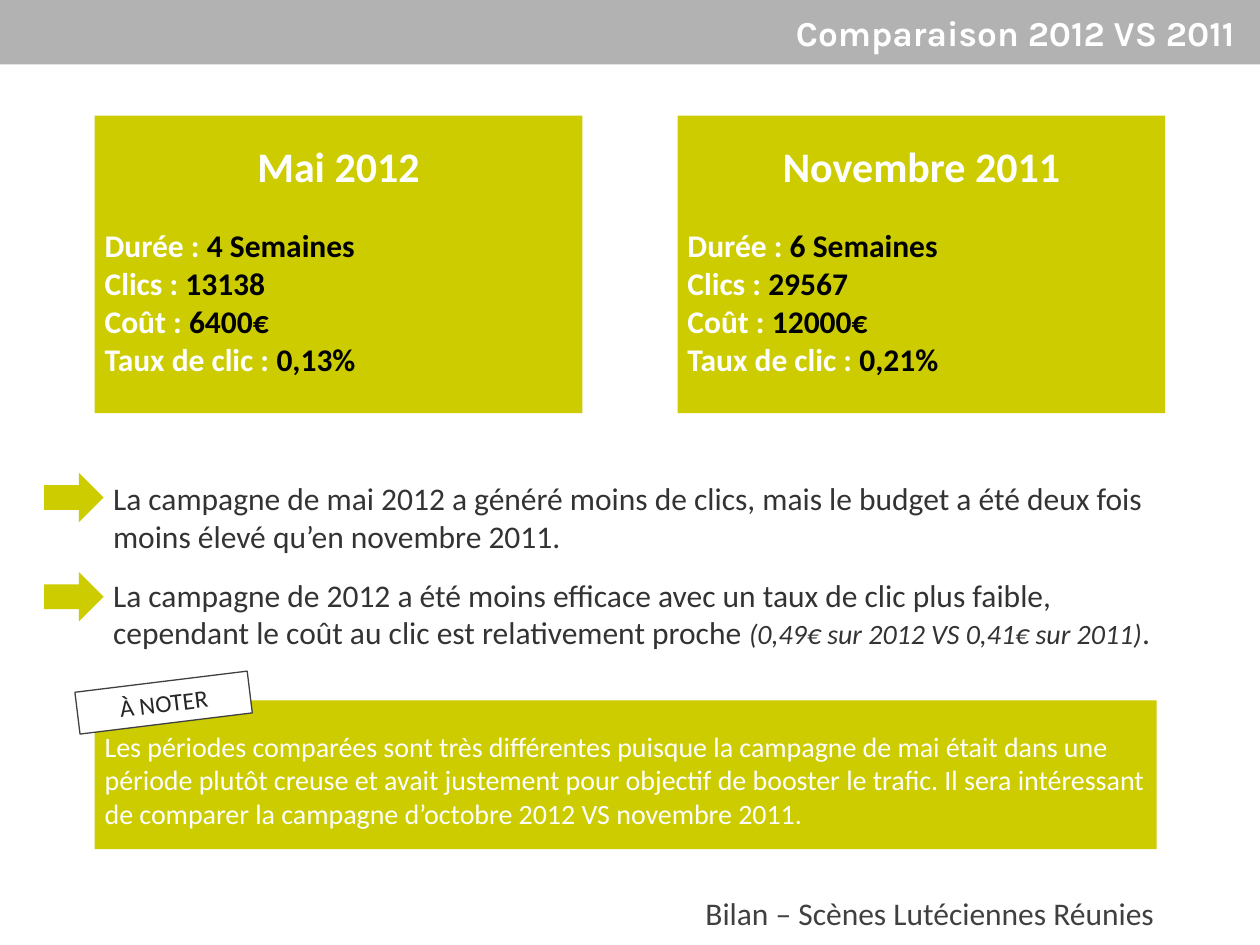
from pptx import Presentation
from pptx.dml.color import RGBColor
from pptx.enum import shapes as sh, text as tx
from pptx.util import Cm, Pt


def paint(item, tone):
    item.fill.solid()
    item.fill.fore_color.rgb = RGBColor.from_string(tone)
    item.line.fill.background()
    item.shadow.inherit = False


def style(run, size, tone, bold=False, italic=False, face="Calibri"):
    font = run.font
    font.name, font.size = face, Pt(size)
    font.bold, font.italic = bold, italic
    font.color.rgb = RGBColor.from_string(tone)


LIME, WHITE, BLACK, DARK = "CCCC00", "FFFFFF", "000000", "333333"
mid = tx.MSO_ANCHOR.MIDDLE
left, center, right = tx.PP_ALIGN.LEFT, tx.PP_ALIGN.CENTER, tx.PP_ALIGN.RIGHT
rect = sh.MSO_SHAPE.RECTANGLE

deck = Presentation()
deck.slide_width, deck.slide_height = Cm(25.4), Cm(19.05)
slide = deck.slides.add_slide(deck.slide_layouts[5])
draw = slide.shapes

title = draw.title
title.left, title.top, title.width, title.height = Cm(0), Cm(0), Cm(25.4), Cm(1.3)
title.fill.solid()
title.fill.fore_color.rgb = RGBColor.from_string("B2B2B2")
frame = title.text_frame
frame.text = "Comparaison 2012 VS 2011"
frame.margin_right = Cm(0.51)
frame.vertical_anchor = mid
frame.paragraphs[0].alignment = right
style(frame.paragraphs[0].runs[0], 20, WHITE, bold=True, face="Karla")

points = [
    [("La campagne de mai 2012 a généré moins de clics, mais le budget a été "
      "deux fois moins élevé qu’en novembre 2011.", 18)],
    [("La campagne de 2012 a été moins efficace avec un taux de clic plus "
      "faible, cependant le coût au clic est relativement proche ", 18),
     ("(0,49€ sur 2012 VS 0,41€ sur 2011)", 16), (".", 18)],
]
body = draw.add_textbox(Cm(2.03), Cm(9.53), Cm(22.1), Cm(3.99))
frame = body.text_frame
frame.word_wrap = True
for i, parts in enumerate(points):
    para = frame.paragraphs[0] if i == 0 else frame.add_paragraph()
    para.space_before, para.space_after = Pt(6 * i), Pt(6)
    for words, size in parts:
        run = para.add_run()
        run.text = words
        style(run, size, DARK, italic=size == 16)
    arrow = draw.add_shape(sh.MSO_SHAPE.RIGHT_ARROW, Cm(0.89), Cm(9.53 + 2 * i),
                           Cm(1.2), Cm(1))
    paint(arrow, LIME)

foot = draw.add_textbox(Cm(8.69), Cm(17.75), Cm(14.83), Cm(1.3))
frame = foot.text_frame
frame.word_wrap = True
frame.vertical_anchor = mid
frame.text = "Bilan – Scènes Lutéciennes Réunies"
frame.paragraphs[0].alignment = right
style(frame.paragraphs[0].runs[0], 18, "404040")

labels = ["Durée : ", "Clics : ", "Coût : ", "Taux de clic : "]
months = [
    ("Mai 2012", ["4 Semaines", "13138", "6400€", "0,13%"]),
    ("Novembre 2011", ["6 Semaines", "29567", "12000€", "0,21%"]),
]
for i, (month, facts) in enumerate(months):
    card = draw.add_shape(rect, Cm(1.91 + 11.75 * i), Cm(2.33), Cm(9.83), Cm(6))
    paint(card, LIME)
    frame = card.text_frame
    frame.margin_left = frame.margin_right = frame.margin_bottom = Cm(0.2)
    frame.margin_top = Cm(0.51)
    frame.vertical_anchor = tx.MSO_ANCHOR.TOP
    frame.text = month
    head = frame.paragraphs[0]
    head.alignment, head.space_after = center, Pt(20)
    style(head.runs[0], 24, WHITE, bold=True)
    for label, fact in zip(labels, facts):
        para = frame.add_paragraph()
        para.alignment = left
        for words, tone in ((label, WHITE), (fact, BLACK)):
            run = para.add_run()
            run.text = words
            style(run, 18, tone, bold=True)

note = draw.add_shape(rect, Cm(1.91), Cm(14.12), Cm(21.41), Cm(3))
paint(note, LIME)
frame = note.text_frame
frame.margin_left = frame.margin_right = Cm(0.2)
frame.margin_top, frame.margin_bottom = Cm(0.3), Cm(0.1)
frame.vertical_anchor = mid
frame.text = ("Les périodes comparées sont très différentes puisque la campagne de "
              "mai était dans une période plutôt creuse et avait justement pour "
              "objectif de booster le trafic. Il sera intéressant de comparer la "
              "campagne d’octobre 2012 VS novembre 2011.")
frame.paragraphs[0].alignment = left
style(frame.paragraphs[0].runs[0], 16, WHITE)

tag = draw.add_shape(rect, Cm(1.55), Cm(13.74), Cm(3.5), Cm(0.85))
paint(tag, WHITE)
tag.line.color.rgb = RGBColor.from_string("404040")
tag.line.width = Pt(0.75)
tag.rotation = 353
frame = tag.text_frame
frame.vertical_anchor = mid
frame.text = "À NOTER"
frame.paragraphs[0].alignment = center
style(frame.paragraphs[0].runs[0], 14, "262626")

deck.save("out.pptx")
